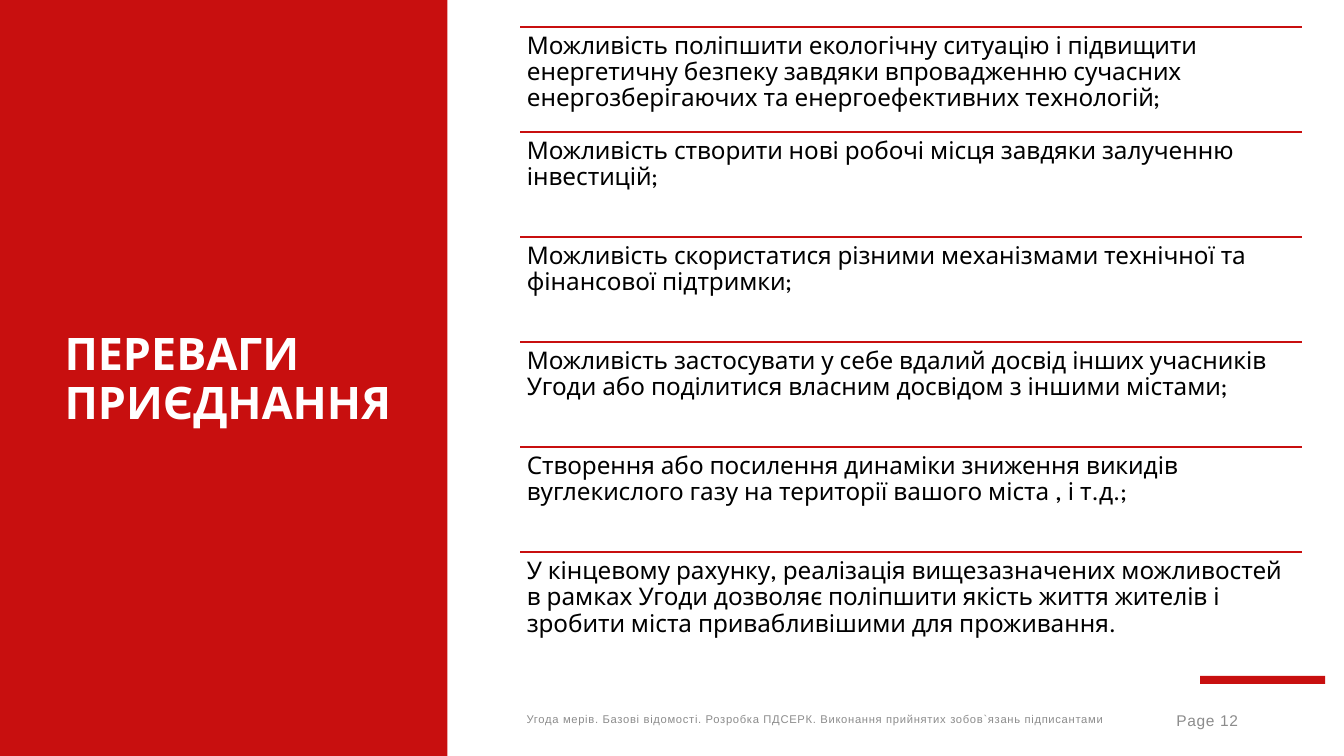
from dataclasses import dataclass

import pptx
import pptx.dml.color
import pptx.enum.shapes
import pptx.enum.text
import pptx.oxml
import pptx.oxml.ns
import pptx.util

Inches = pptx.util.Inches
Pt = pptx.util.Pt
RGB = pptx.dml.color.RGBColor.from_string
ALIGN = pptx.enum.text.PP_ALIGN
ANCHOR = pptx.enum.text.MSO_ANCHOR


@dataclass(frozen=True)
class Theme:
    red: str = "C80F0F"
    white: str = "FFFFFF"
    black: str = "000000"
    grey: str = "8C8C8C"
    main_font: str = "League Spartan"
    footer_font: str = "Arial"
    title_size: float = 24
    body_size: float = 13
    footer_size: float = 6
    page_size: float = 8.3
    footer_spacing: str = "37"


THEME = Theme()

BENEFITS = [
    "Можливість поліпшити екологічну ситуацію і підвищити енергетичну безпеку завдяки впровадженню сучасних енергозберігаючих та енергоефективних технологій;",
    "Можливість створити нові робочі місця завдяки залученню інвестицій;",
    "Можливість скористатися різними механізмами технічної та фінансової підтримки;",
    "Можливість застосувати у себе вдалий досвід інших учасників Угоди або поділитися власним досвідом з іншими містами;",
    "Створення або посилення динаміки зниження викидів вуглекислого газу на території вашого міста , і т.д.;",
    "У кінцевому рахунку, реалізація вищезазначених можливостей в рамках Угоди дозволяє поліпшити якість життя жителів і зробити міста привабливішими для проживання.",
]
FOOTER = "Угода мерів. Базові відомості. Розробка ПДСЕРК. Виконання прийнятих зобов`язань підписантами"


def write(sp, text, font, size, color, anchor=ANCHOR.MIDDLE, align=ALIGN.LEFT,
          line=0.9, bold=False):
    tf = sp.text_frame
    tf.word_wrap = True
    tf.auto_size = pptx.enum.text.MSO_AUTO_SIZE.NONE
    tf.vertical_anchor = anchor
    p = tf.paragraphs[0]
    p.text = text
    p.alignment = align
    p.line_spacing = line
    p.font.name = font
    p.font.size = Pt(size)
    p.font.bold = bold
    p.font.color.rgb = RGB(color)
    return tf


def add_bar(s, x, y, w, h):
    sp = s.shapes.add_shape(pptx.enum.shapes.MSO_SHAPE.RECTANGLE,
                            Inches(x), Inches(y), Inches(w), Inches(h))
    sp.shadow.inherit = False
    sp.fill.solid()
    sp.fill.fore_color.rgb = RGB(THEME.red)
    sp.line.fill.background()


def add_title_panel(s, x, y, w, h):
    add_bar(s, x, y, w, h)
    title = s.shapes.title
    title.left, title.top = Inches(x + 0.39), Inches(y + 0.53)
    title.width, title.height = Inches(w - 0.52), Inches(h - 1.03)
    write(title, "ПЕРЕВАГИ ПРИЄДНАННЯ", THEME.main_font, THEME.title_size,
          THEME.white, bold=True)
    title.element.getparent().append(title.element)


def add_benefits(s, x, y, w, h):
    group = s.shapes.add_group_shape()
    row = h / len(BENEFITS)
    for i, text in enumerate(BENEFITS):
        top = Inches(y + i * row)
        rule = group.shapes.add_connector(pptx.enum.shapes.MSO_CONNECTOR.STRAIGHT,
                                          Inches(x), top, Inches(x + w), top)
        rule.line.color.rgb = RGB(THEME.red)
        rule.line.width = Pt(1)
        rule.element.spPr.append(pptx.oxml.parse_xml(
            f'<a:effectLst {pptx.oxml.ns.nsdecls("a")}/>'))
        box = group.shapes.add_textbox(Inches(x), top, Inches(w), Inches(row))
        tf = write(box, text, THEME.main_font, THEME.body_size, THEME.black,
                   anchor=ANCHOR.TOP)
        tf.margin_left = tf.margin_right = Inches(0.05)
        tf.margin_top = tf.margin_bottom = Inches(0.05)


def add_footer(s, x, y, w, h):
    page_w = 0.67
    parts = [
        (x, 4.69, FOOTER, THEME.footer_size, ALIGN.LEFT, 0.9),
        (x + w - page_w, page_w, "Page 12", THEME.page_size, ALIGN.RIGHT, 1.0),
    ]
    for left, width, text, size, align, line in parts:
        box = s.shapes.add_textbox(Inches(left), Inches(y), Inches(width), Inches(h))
        write(box, text, THEME.footer_font, size, THEME.grey, align=align, line=line)
        for props in box.element.iter(pptx.oxml.ns.qn("a:defRPr")):
            props.set("spc", THEME.footer_spacing)


def main():
    prs = pptx.Presentation()
    prs.slide_width = Inches(10)
    prs.slide_height = Inches(10 * 9 / 16)
    s = prs.slides.add_slide(prs.slide_layouts[5])
    add_bar(s, 8.93, 5.03, 0.93, 0.06)
    add_title_panel(s, -0.01, 0, 3.34, 5.63)
    add_footer(s, 3.82, 5.21, 5.49, 0.3)
    add_benefits(s, 3.87, 0.2, 5.82, 4.69)
    prs.save("out.pptx")


if __name__ == "__main__":
    main()
